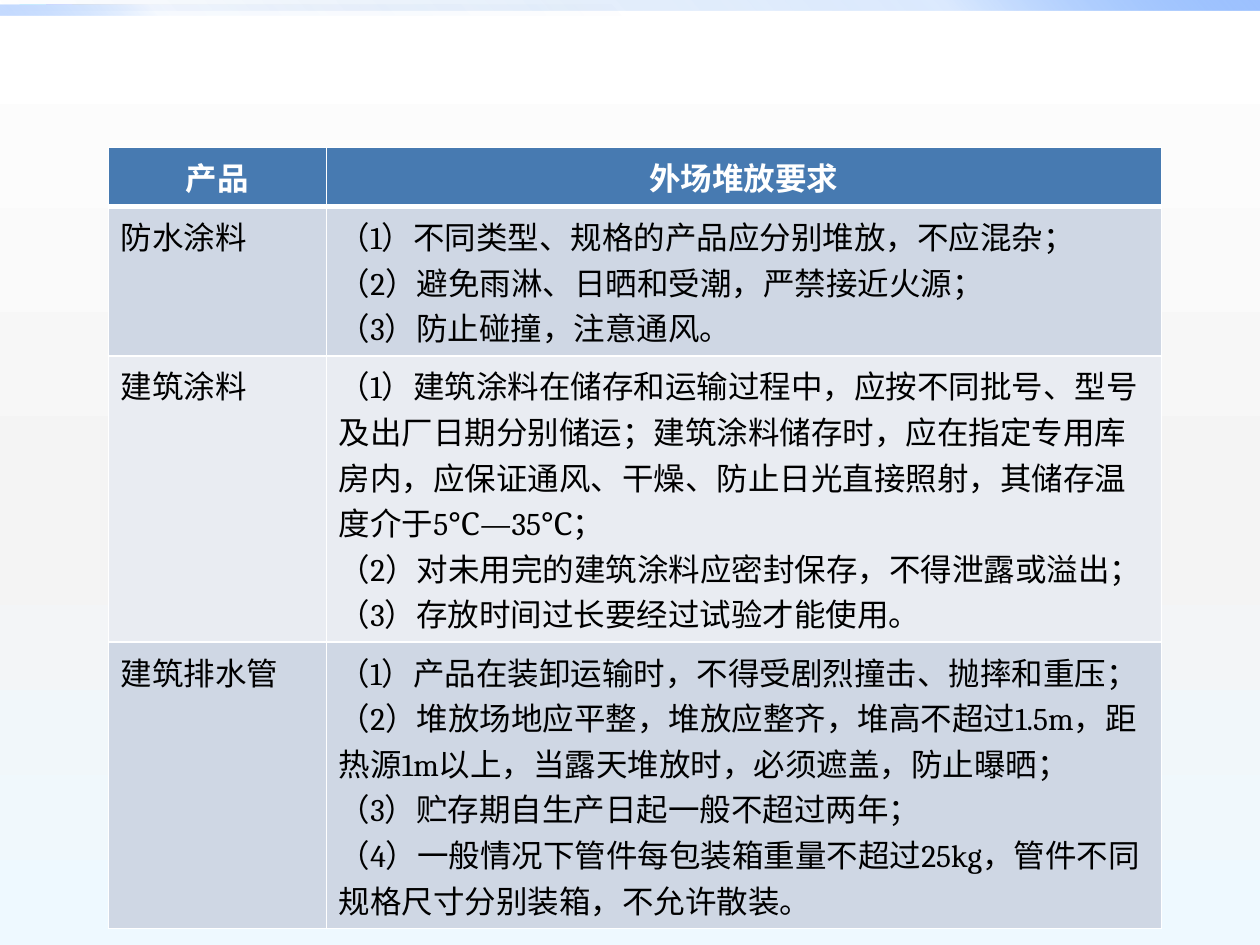
"""Build a slide with a table of outdoor storage requirements for building products."""
from dataclasses import dataclass

from lxml.etree import SubElement
from pptx import Presentation
from pptx.dml.color import RGBColor
from pptx.enum.shapes import MSO_SHAPE
from pptx.enum.text import PP_ALIGN
from pptx.oxml.ns import qn
from pptx.util import Inches, Pt

COLORS = {
    "white": "FFFFFF",
    "black": "000000",
    "header": "477AB1",
    "odd_row": "CFD7E4",
    "even_row": "E9ECF2",
    "deep_blue": "0058B7",
    "blue": "4F95FF",
    "pale_blue": "9EC2FF",
    "grey": "F4F4F4",
    "ice": "EEF9FF",
}
FONT = "Cambria"
COLUMN_WIDTHS = (1.73, 6.63)
TABLE_HEIGHT = 5.44


@dataclass(frozen=True)
class Stop:
    position: int
    color: str
    opacity: int = 100


@dataclass(frozen=True)
class Bar:
    top: float
    width: float
    angle: int
    stops: tuple[Stop, ...]


@dataclass(frozen=True)
class Product:
    name: str
    height: float
    requirements: tuple[str, ...]


BACKGROUND = (Stop(0, "white"), Stop(55, "grey"), Stop(100, "ice"))
BARS = (
    Bar(0, 10, 315, (Stop(0, "deep_blue", 0), Stop(75, "blue", 20), Stop(100, "pale_blue"))),
    Bar(0.04, 5, 135, (Stop(0, "deep_blue", 0), Stop(75, "blue", 5), Stop(100, "pale_blue", 60))),
)
HEADERS = ("产品", "外场堆放要求")
HEADER_HEIGHT = 0.47
PRODUCTS = (
    Product("防水涂料", 1.17, (
        "（1）不同类型、规格的产品应分别堆放，不应混杂；",
        "（2）避免雨淋、日晒和受潮，严禁接近火源；",
        "（3）防止碰撞，注意通风。",
    )),
    Product("建筑涂料", 1.08, (
        "（1）建筑涂料在储存和运输过程中，应按不同批号、型号及出厂日期分别储运；"
        "建筑涂料储存时，应在指定专用库房内，应保证通风、干燥、防止日光直接照射，"
        "其储存温度介于5℃―35℃；",
        "（2）对未用完的建筑涂料应密封保存，不得泄露或溢出；",
        "（3）存放时间过长要经过试验才能使用。",
    )),
    Product("建筑排水管", 1.08, (
        "（1）产品在装卸运输时，不得受剧烈撞击、抛摔和重压；",
        "（2）堆放场地应平整，堆放应整齐，堆高不超过1.5m，距热源1m以上，"
        "当露天堆放时，必须遮盖，防止曝晒；",
        "（3）贮存期自生产日起一般不超过两年；",
        "（4）一般情况下管件每包装箱重量不超过25kg，管件不同规格尺寸分别装箱，不允许散装。",
    )),
)


def rgb(name: str) -> RGBColor:
    return RGBColor.from_string(COLORS[name])


def add_color(parent, name: str):
    return SubElement(parent, qn("a:srgbClr"), val=COLORS[name])


def apply_gradient(fill, element, stops: tuple[Stop, ...], angle: int) -> None:
    fill.gradient()
    fill.gradient_angle = 360 - angle
    stop_list = next(element.iter(qn("a:gsLst")))
    for child in list(stop_list):
        stop_list.remove(child)
    for stop in stops:
        entry = SubElement(stop_list, qn("a:gs"), pos=str(stop.position * 1000))
        color = add_color(entry, stop.color)
        if stop.opacity < 100:
            SubElement(color, qn("a:alpha"), val=str(stop.opacity * 1000))


def draw_bar(slide, bar: Bar) -> None:
    shape = slide.shapes.add_shape(
        MSO_SHAPE.RECTANGLE, 0, Inches(bar.top), Inches(bar.width), Inches(0.08)
    )
    shape.shadow.inherit = False
    shape.line.fill.background()
    apply_gradient(shape.fill, shape._element.spPr, bar.stops, bar.angle)


def draw_borders(cell, top: int = 1, bottom: int = 1) -> None:
    properties = cell._tc.get_or_add_tcPr()
    for side, width in (("L", 1), ("R", 1), ("T", top), ("B", bottom)):
        line = SubElement(properties, qn(f"a:ln{side}"), w=str(Pt(width)))
        add_color(SubElement(line, qn("a:solidFill")), "white")


def fill_cell(cell, lines: tuple[str, ...], fill: str, header: bool = False) -> None:
    cell.fill.solid()
    cell.fill.fore_color.rgb = rgb(fill)
    frame = cell.text_frame
    for index, text in enumerate(lines):
        paragraph = frame.add_paragraph() if index else frame.paragraphs[0]
        paragraph.alignment = PP_ALIGN.CENTER if header else PP_ALIGN.LEFT
        run = paragraph.add_run()
        run.text = text
        run.font.name = FONT
        run.font.size = Pt(18)
        run.font.bold = header
        run.font.color.rgb = rgb("white" if header else "black")


def draw_table(slide) -> None:
    graphic_frame = slide.shapes.add_table(
        len(PRODUCTS) + 1, len(HEADERS), Inches(0.86), Inches(1.17),
        Inches(sum(COLUMN_WIDTHS)), Inches(TABLE_HEIGHT),
    )
    table = graphic_frame.table
    for column, width in zip(table.columns, COLUMN_WIDTHS):
        column.width = Inches(width)
    heights = (HEADER_HEIGHT, *(product.height for product in PRODUCTS))
    for row, height in zip(table.rows, heights):
        row.height = Inches(height)
    graphic_frame.height = Inches(TABLE_HEIGHT)

    for column, text in enumerate(HEADERS):
        cell = table.cell(0, column)
        draw_borders(cell, bottom=3)
        fill_cell(cell, (text,), "header", header=True)
    for row, product in enumerate(PRODUCTS, start=1):
        fill = "odd_row" if row % 2 else "even_row"
        for column, lines in enumerate(((product.name,), product.requirements)):
            cell = table.cell(row, column)
            draw_borders(cell, top=3 if row == 1 else 1)
            fill_cell(cell, lines, fill)


def main() -> None:
    presentation = Presentation()
    presentation.slide_width = Inches(10)
    presentation.slide_height = Inches(7.5)
    slide = presentation.slides.add_slide(presentation.slide_layouts[6])
    apply_gradient(slide.background.fill, slide._element, BACKGROUND, 90)
    for bar in BARS:
        draw_bar(slide, bar)
    draw_table(slide)
    presentation.save("out.pptx")


if __name__ == "__main__":
    main()
